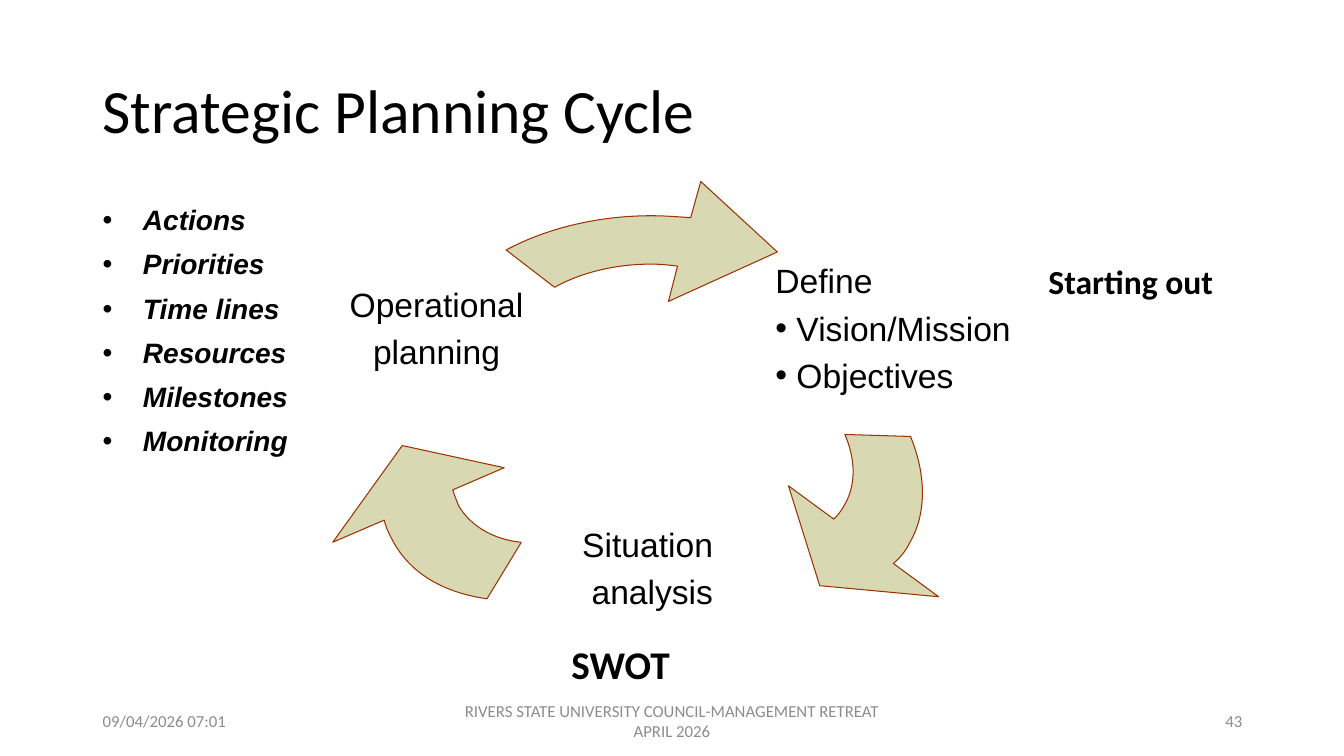
"""Build the Strategic Planning Cycle slide."""
import math

import lxml.etree
import pptx
import pptx.dml.color
import pptx.enum.text
import pptx.oxml.ns
import pptx.util

RGBColor = pptx.dml.color.RGBColor
Inches = pptx.util.Inches
Pt = pptx.util.Pt
Align = pptx.enum.text.PP_ALIGN
Anchor = pptx.enum.text.MSO_ANCHOR
qn = pptx.oxml.ns.qn

BLACK = RGBColor(0x00, 0x00, 0x00)
GREY = RGBColor(0x8C, 0x8C, 0x8C)
OLIVE = RGBColor(0x80, 0x80, 0x00)
RUST = RGBColor(0x99, 0x33, 0x00)

SLIDE_WIDTH, SLIDE_HEIGHT = 13.33, 7.5
MARGIN = 0.92
CONTENT_WIDTH = 11.5
FOOTER_TOP, FOOTER_HEIGHT = 6.95, 0.4
FOOTER_SIDE, FOOTER_MIDDLE = 3, 4.5
STAGE_WIDTH, STAGE_HEIGHT = 1.8, 1.16
STAGE_UPPER, STAGE_LOWER = 2.67, 5.05
FILL_OPACITY = 30

TITLE = "Strategic Planning Cycle"
ACTIONS = ["Actions", "Priorities", "Time lines", "Resources", "Milestones", "Monitoring"]
STAGES = [
    (7.69, STAGE_UPPER, 2.4, ["Define", "Vision/Mission", "Objectives"], Align.LEFT, 1),
    (5.57, STAGE_LOWER, STAGE_WIDTH, ["Situation ", "analysis"], Align.CENTER, None),
    (3.43, STAGE_UPPER, STAGE_WIDTH, ["Operational", "planning"], Align.CENTER, None),
]
LABELS = [
    ("SWOT", (5.57, 6.3, 1.66, 0.57), 28, True),
    ("Starting out", (10.3, 2.54, 1.86, 0.5), 24, False),
]
FOOTERS = [
    ("09/04/2026 07:01", MARGIN, FOOTER_SIDE, Align.LEFT),
    ("RIVERS STATE UNIVERSITY COUNCIL-MANAGEMENT RETREAT APRIL 2026",
     (SLIDE_WIDTH - FOOTER_MIDDLE) / 2, FOOTER_MIDDLE, Align.CENTER),
    ("43", MARGIN + CONTENT_WIDTH - FOOTER_SIDE, FOOTER_SIDE, Align.RIGHT),
]
ARROWS = [
    ((4.22, 2.14, 4.48, 2.89), 0, [
        [(6.72, 2.64)],
        [(6.64, 2.63), (6.55, 2.62), (6.46, 2.62)],
        [(6.11, 2.62), (5.77, 2.7), (5.5, 2.85)],
        [(5.02, 2.48)],
        [(5.43, 2.26), (5.94, 2.14), (6.46, 2.14)],
        [(6.59, 2.14), (6.72, 2.15), (6.85, 2.16)],
        [(6.95, 1.8)], [(7.71, 2.5)], [(6.63, 2.99)],
    ]),
    ((5.63, 2.03, 2.89, 4.48), 120, [
        [(8.27, 5.15)],
        [(8.31, 5.11), (8.34, 5.07), (8.37, 5.02)],
        [(8.49, 4.82), (8.49, 4.57), (8.38, 4.31)],
        [(9.03, 4.33)],
        [(9.19, 4.72), (9.19, 5.1), (9.02, 5.39)],
        [(8.98, 5.47), (8.93, 5.53), (8.86, 5.59)],
        [(9.31, 5.92)], [(8.13, 5.81)], [(7.82, 4.82)],
    ]),
    ((4.4, 2.03, 2.89, 4.48), 240, [
        [(4.49, 4.86)],
        [(4.51, 4.92), (4.53, 4.97), (4.55, 5.02)],
        [(4.67, 5.22), (4.89, 5.35), (5.17, 5.38)],
        [(4.83, 5.94)],
        [(4.4, 5.88), (4.08, 5.69), (3.91, 5.39)],
        [(3.87, 5.32), (3.83, 5.24), (3.81, 5.16)],
        [(3.3, 5.38)], [(3.99, 4.42)], [(5, 4.64)],
    ]),
]


def add_bullet(paragraph, indent):
    properties = paragraph._p.get_or_add_pPr()
    properties.set("marL", str(Inches(indent)))
    properties.set("indent", str(-Inches(indent)))
    for tag, name, value in [("a:buFont", "typeface", "Arial"), ("a:buChar", "char", "•")]:
        lxml.etree.SubElement(properties, qn(tag)).set(name, value)


def add_text(slide, lines, box, *, size, font="Calibri", color=BLACK, bold=False,
             italic=False, align=Align.LEFT, anchor=Anchor.TOP, wrap=True, inset=True,
             line_spacing=None, space_before=0, bullets_from=None, indent=0):
    shape = slide.shapes.add_textbox(*map(Inches, box))
    frame = shape.text_frame
    frame.word_wrap = wrap
    frame.vertical_anchor = anchor
    if not inset:
        frame.margin_left = frame.margin_right = frame.margin_top = frame.margin_bottom = 0
    for index, line in enumerate(lines):
        paragraph = frame.add_paragraph() if index else frame.paragraphs[0]
        if bullets_from is not None and index >= bullets_from:
            add_bullet(paragraph, indent)
        paragraph.alignment = align
        if line_spacing:
            paragraph.line_spacing = line_spacing
        if index:
            paragraph.space_before = Pt(space_before)
        run = paragraph.add_run()
        run.text = line
        run.font.name = font
        run.font.size = Pt(size)
        run.font.bold = bold
        run.font.italic = italic
        run.font.color.rgb = color


def frame_point(point, frame, rotation):
    left, top, width, height = frame
    angle = math.radians(rotation)
    across, down = point[0] - left - width / 2, point[1] - top - height / 2
    x = across * math.cos(angle) + down * math.sin(angle) + width / 2
    y = down * math.cos(angle) - across * math.sin(angle) + height / 2
    return Inches(x), Inches(y)


def add_arrow(slide, frame, rotation, segments):
    corners = [tuple(map(Inches, segment[-1])) for segment in segments]
    builder = slide.shapes.build_freeform(*corners[0])
    builder.add_line_segments(corners[1:], close=True)
    shape = builder.convert_to_shape()
    shape.left, shape.top, shape.width, shape.height = map(Inches, frame)
    shape.rotation = rotation

    outline = shape._element.spPr.find(".//" + qn("a:path"))
    outline.set("w", str(shape.width))
    outline.set("h", str(shape.height))
    for command, segment in zip(list(outline), segments):
        if len(segment) == 3:
            command_curve = lxml.etree.Element(qn("a:cubicBezTo"))
            outline.replace(command, command_curve)
            command = command_curve
        for vertex in list(command):
            command.remove(vertex)
        for point in segment:
            x, y = frame_point(point, frame, rotation)
            vertex = lxml.etree.SubElement(command, qn("a:pt"))
            vertex.set("x", str(x))
            vertex.set("y", str(y))

    shape.shadow.inherit = False
    shape.fill.solid()
    shape.fill.fore_color.rgb = OLIVE
    color = shape._element.spPr.find(".//" + qn("a:srgbClr"))
    lxml.etree.SubElement(color, qn("a:alpha")).set("val", str(FILL_OPACITY * 1000))
    shape.line.color.rgb = RUST
    shape.line.width = Pt(0.75)


def main():
    presentation = pptx.Presentation()
    presentation.slide_width = Inches(SLIDE_WIDTH)
    presentation.slide_height = Inches(SLIDE_HEIGHT)
    slide = presentation.slides.add_slide(presentation.slide_layouts[6])

    for text, left, width, align in FOOTERS:
        add_text(slide, [text], (left, FOOTER_TOP, width, FOOTER_HEIGHT), size=12,
                 color=GREY, align=align, anchor=Anchor.MIDDLE)
    add_text(slide, [TITLE], (MARGIN, 0.4, CONTENT_WIDTH, 1.45), size=44,
             anchor=Anchor.MIDDLE, line_spacing=0.9)
    add_text(slide, ACTIONS, (MARGIN, 2, CONTENT_WIDTH, 2.76), size=20, font="Arial",
             bold=True, italic=True, line_spacing=0.9, space_before=10,
             bullets_from=0, indent=0.4)
    for frame, rotation, segments in ARROWS:
        add_arrow(slide, frame, rotation, segments)
    for left, top, width, lines, align, bullets_from in STAGES:
        add_text(slide, lines, (left, top, width, STAGE_HEIGHT), size=24, font="Arial",
                 align=align, anchor=Anchor.MIDDLE, inset=False, space_before=4.8,
                 bullets_from=bullets_from, indent=0.21)
    for text, box, size, wrap in LABELS:
        add_text(slide, [text], box, size=size, bold=True, wrap=wrap)

    presentation.save("out.pptx")


if __name__ == "__main__":
    main()
